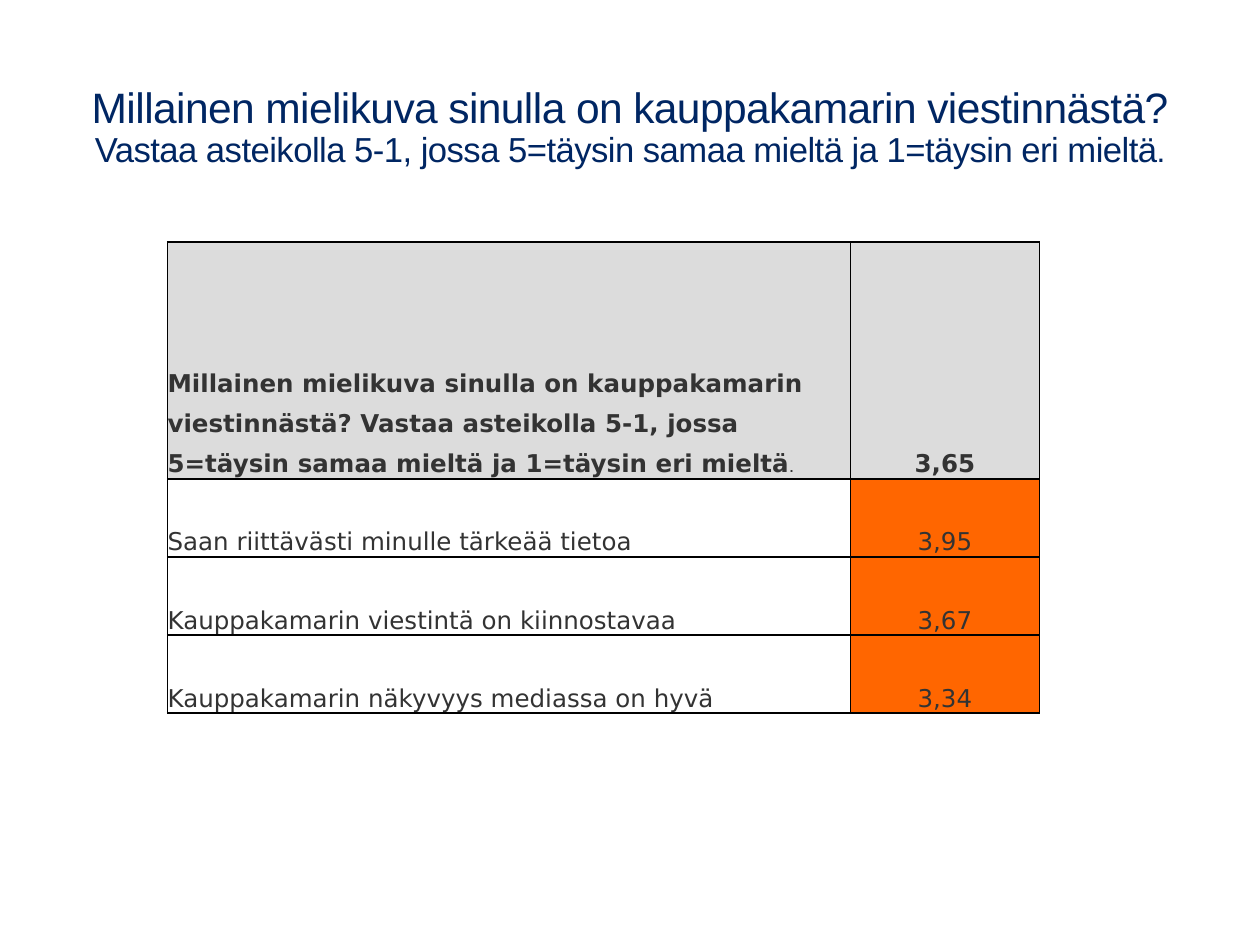
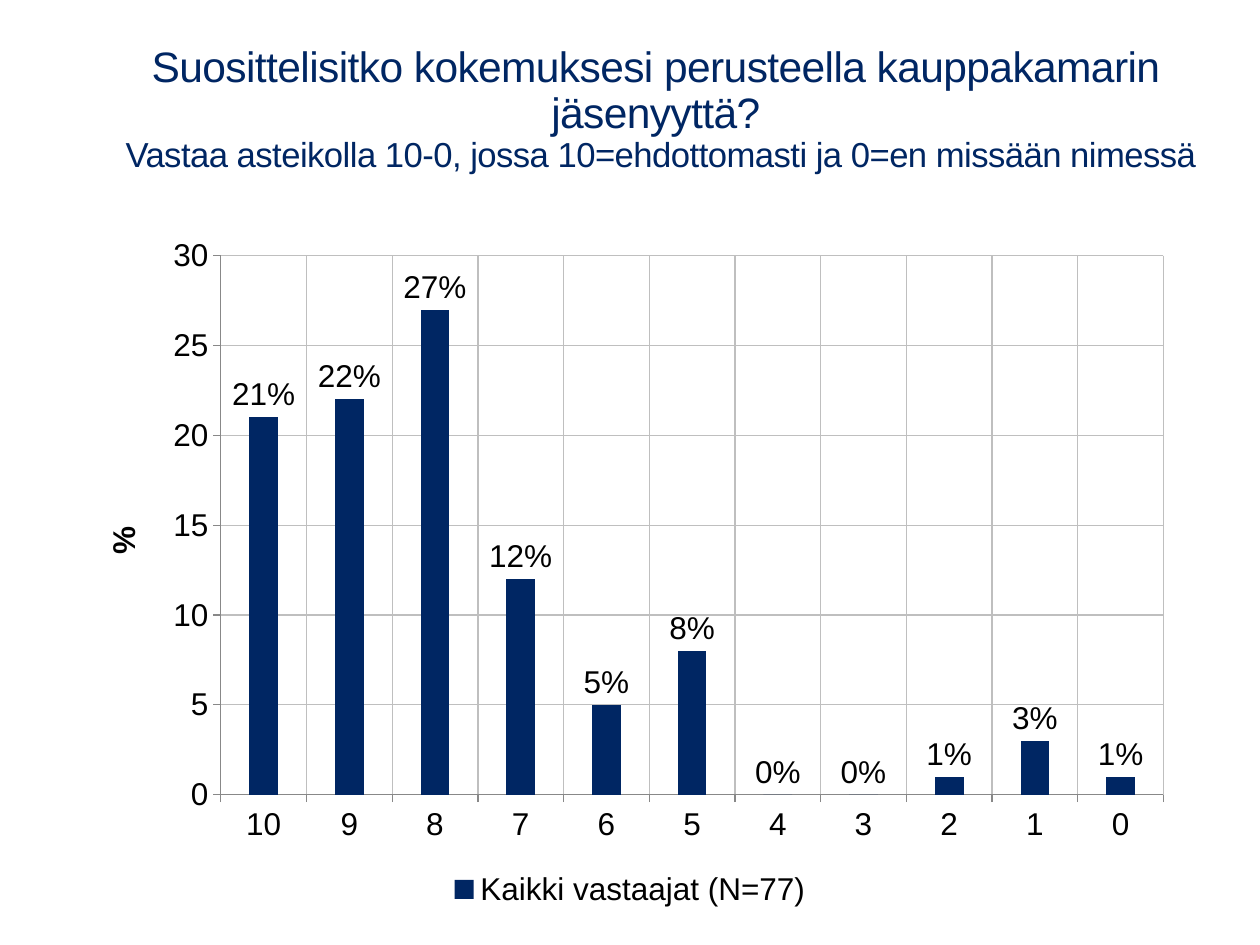
import pptx
import pptx.chart.data
import pptx.dml.color
import pptx.enum.chart
import pptx.enum.text
import pptx.oxml
import pptx.oxml.ns
import pptx.util
from lxml import etree

Inches = pptx.util.Inches
Pt = pptx.util.Pt
HUES = {"navy": "002663", "text": "333333", "head": "DCDCDC", "score": "FF6600",
        "black": "000000", "grid": "BFBFBF", "axis": "888888"}
ALIGN = pptx.enum.text.PP_ALIGN
ANCHOR = pptx.enum.text.MSO_ANCHOR
CHART = pptx.enum.chart


def hue(name):
    return pptx.dml.color.RGBColor.from_string(HUES[name])


def style(font, size, color, face="Arial", bold=False):
    font.size = Pt(size)
    font.name = face
    font.bold = bold
    font.color.rgb = hue(color)


def add_title(slide, box, parts, foot=0.05):
    title = slide.shapes.title
    title.left, title.top, title.width, title.height = map(Inches, box)
    frame = title.text_frame
    frame.auto_size = pptx.enum.text.MSO_AUTO_SIZE.NONE
    frame.vertical_anchor = ANCHOR.BOTTOM
    frame.margin_bottom = Inches(foot)
    para = frame.paragraphs[0]
    para.alignment = ALIGN.CENTER
    para.line_spacing = 0.9
    style(para.font, 24.3, "navy")
    for text, size in parts:
        if text == "\n":
            para.add_line_break()
            continue
        run = para.add_run()
        run.text = text
        run.font.size = Pt(size)
        run.font._element.set("spc", "-30")


def add_edges(cell):
    props = cell._tc.get_or_add_tcPr()
    for spot, side in enumerate(("lnL", "lnR", "lnT", "lnB")):
        line = etree.Element(pptx.oxml.ns.qn("a:" + side), w=str(Pt(1)))
        fill = etree.SubElement(line, pptx.oxml.ns.qn("a:solidFill"))
        etree.SubElement(fill, pptx.oxml.ns.qn("a:srgbClr"), val=HUES["black"])
        props.insert(spot, line)


def fill_cell(cell, parts, align, bold, color):
    cell.margin_left = cell.margin_right = cell.margin_top = cell.margin_bottom = 0
    cell.vertical_anchor = ANCHOR.BOTTOM
    if color:
        cell.fill.solid()
        cell.fill.fore_color.rgb = hue(color)
    else:
        cell.fill.background()
    add_edges(cell)
    para = cell.text_frame.paragraphs[0]
    para.alignment = align
    para.line_spacing = 1.4
    style(para.font, 14, "text", "DejaVu Sans", bold)
    for text, size in parts:
        run = para.add_run()
        run.text = text
        run.font.size = Pt(size)


def add_scores(slide, box, rows):
    table = slide.shapes.add_table(len(rows), 2, *map(Inches, box)).table
    for col, width in zip(table.columns, (5.42, 1.5)):
        col.width = Inches(width)
    for spot, (parts, score) in enumerate(rows):
        head = spot == 0
        table.rows[spot].height = Inches(1.88 if head else 0.62)
        fill_cell(table.cell(spot, 0), parts, ALIGN.LEFT, head, "head" if head else None)
        fill_cell(table.cell(spot, 1), [(score, 14)], ALIGN.CENTER, head,
                  "head" if head else "score")


def set_axis(axis):
    axis.has_major_gridlines = True
    grid = axis.major_gridlines.format.line
    grid.color.rgb = hue("grid")
    grid.width = Pt(0.75)
    axis.format.line.color.rgb = hue("axis")
    axis.major_tick_mark = CHART.XL_TICK_MARK.OUTSIDE
    axis.minor_tick_mark = CHART.XL_TICK_MARK.NONE
    style(axis.tick_labels.font, 18, "black")


def add_bars(slide, box, name, cats, vals):
    data = pptx.chart.data.CategoryChartData()
    data.categories = cats
    data.add_series(name, vals)
    kind = CHART.XL_CHART_TYPE.COLUMN_CLUSTERED
    chart = slide.shapes.add_chart(kind, *map(Inches, box), data).chart
    style(chart.font, 18, "black")
    chart.has_title = False
    chart.has_legend = True
    chart.legend.position = CHART.XL_LEGEND_POSITION.BOTTOM
    chart.legend.include_in_layout = False
    style(chart.legend.font, 18, "black")
    set_axis(chart.category_axis)
    chart.category_axis.tick_label_position = CHART.XL_TICK_LABEL_POSITION.LOW
    axis = chart.value_axis
    set_axis(axis)
    axis.minimum_scale, axis.maximum_scale, axis.major_unit = 0, 30, 5
    para = axis.axis_title.text_frame.paragraphs[0]
    para.text = "%"
    style(para.font, 18, "black", bold=True)
    plot = chart.plots[0]
    plot.gap_width = 199
    plot.vary_by_categories = False
    bars = plot.series[0]
    bars.format.fill.solid()
    bars.format.fill.fore_color.rgb = hue("navy")
    labels = bars.data_labels
    labels.show_value = True
    labels.number_format = "#0\\%"
    labels.number_format_is_linked = False
    labels.position = CHART.XL_LABEL_POSITION.OUTSIDE_END
    style(labels.font, 18, "black")


def main():
    deck = pptx.Presentation()
    deck.slide_width, deck.slide_height = Inches(10), Inches(7.5)
    plain = deck.slide_layouts.get_by_name("Title Only")

    ask = "Millainen mielikuva sinulla on kauppakamarin viestinnästä? "
    scale = "Vastaa asteikolla 5-1, jossa 5=täysin samaa mieltä ja 1=täysin eri mieltä"
    slide = deck.slides.add_slide(plain)
    add_title(slide, (0.59, 0.44, 8.82, 1.22),
              [(ask, 24.3), (scale, 19.8), (".", 18)], foot=0.31)
    add_scores(slide, (1.33, 1.92, 6.92, 3.75), [
        ([(ask + scale, 14), (".", 6)], "3,65"),
        ([("Saan riittävästi minulle tärkeää tietoa", 14)], "3,95"),
        ([("Kauppakamarin viestintä on kiinnostavaa", 14)], "3,67"),
        ([("Kauppakamarin näkyvyys mediassa on hyvä", 14)], "3,34")])

    slide = deck.slides.add_slide(plain)
    add_title(slide, (0.67, 0.42, 9.07, 1.02), [
        ("Suosittelisitko kokemuksesi perusteella kauppakamarin jäsenyyttä?", 24.3),
        ("\n", 24.3),
        (" Vastaa asteikolla 10-0, jossa 10=ehdottomasti ja 0=en missään nimessä", 19.8)])
    add_bars(slide, (0.59, 1.78, 8.82, 5.47), "Kaikki vastaajat (N=77)",
             [str(grade) for grade in range(10, -1, -1)],
             (21, 22, 27, 12, 5, 8, 0, 0, 1, 3, 1))

    deck.save("out.pptx")


if __name__ == "__main__":
    main()
